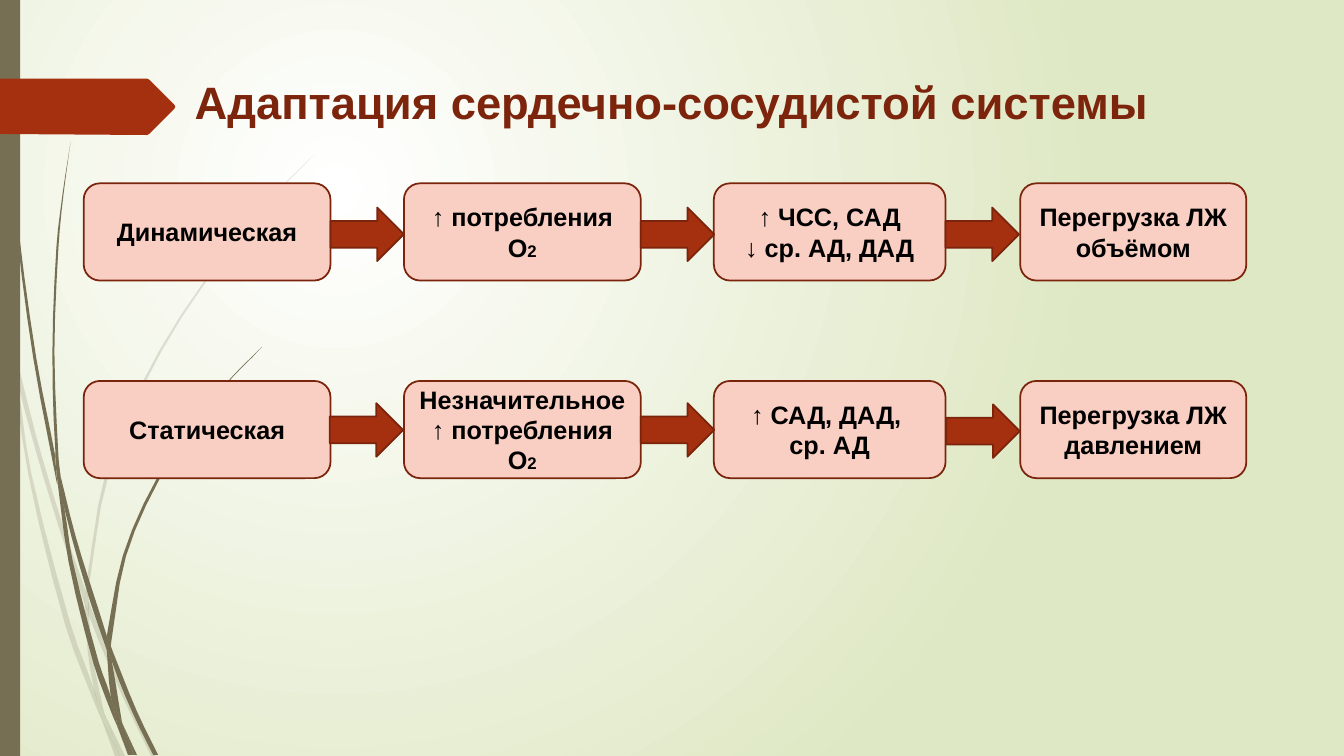
from dataclasses import dataclass

from lxml.etree import SubElement
from pptx import Presentation
from pptx.dml.color import RGBColor
from pptx.enum.shapes import MSO_SHAPE
from pptx.enum.text import MSO_ANCHOR, PP_ALIGN
from pptx.oxml.ns import qn
from pptx.shapes.autoshape import Shape
from pptx.slide import Slide
from pptx.text.text import _Paragraph as Para
from pptx.util import Cm, Pt

WHITE = RGBColor(0xFF, 0xFF, 0xFF)
BLACK = RGBColor(0, 0, 0)
LIME = RGBColor(0xDF, 0xE8, 0xC4)
OLIVE = RGBColor(0x76, 0x6F, 0x54)
RUST = RGBColor(0xA5, 0x30, 0x10)
BROWN = RGBColor(0x7A, 0x24, 0x0C)
TITLE = RGBColor(0x7C, 0x24, 0x0C)
PINK = RGBColor(0xF9, 0xCF, 0xC3)

Edge = list[tuple[float, float]]
Line = tuple[str, ...]


@dataclass
class Stem:
    """A piece of grass between two edges, in hundredths of an inch."""
    left: Edge
    right: Edge


@dataclass
class Col:
    """A column of boxes, in centimetres."""
    left: float
    width: float


@dataclass
class Row:
    """A chain of boxes and arrows; the second run of a line is small."""
    top: float
    cells: list[list[Line]]
    arrows: Edge


PALE = [
    Stem([(0, 299), (10, 344), (11, 350)], [(0, 282), (9, 322), (11, 350)]),
    Stem([(14, 345), (17, 376), (36, 449), (58, 522), (84, 599)],
         [(14, 345), (36, 433), (62, 520), (85, 586)]),
    Stem([(88, 596), (88, 610), (123, 694), (150, 750)],
         [(88, 596), (92, 607), (127, 692), (155, 750)]),
    Stem([(105, 711), (119, 750)], [(105, 711), (124, 750)]),
    Stem([(11, 350), (28, 470), (65, 621), (92, 693), (101, 714)],
         [(11, 350), (17, 376), (31, 469), (70, 619), (93, 683), (99, 707),
          (101, 714)]),
    Stem([(84, 599), (87, 646), (93, 683), (96, 692), (105, 711)],
         [(84, 599), (88, 608), (91, 646), (103, 706), (105, 711)]),
    Stem([(312, 153), (268, 197), (228, 244), (158, 348), (107, 461),
          (85, 584), (85, 586)],
         [(312, 154), (268, 198), (229, 245), (160, 349), (110, 462),
          (88, 584), (88, 596)]),
    Stem([(101, 714), (114, 750)], [(101, 714), (119, 750)]),
    Stem([(85, 586), (84, 599), (88, 608)], [(85, 586), (88, 596), (88, 610)]),
    Stem([(93, 683), (99, 707), (101, 714), (119, 750)],
         [(93, 683), (96, 692), (105, 711), (119, 750)]),
]
DARK = [
    Stem([(3, 0), (4, 48), (7, 110), (17, 233), (33, 355), (56, 477),
          (57, 481)],
         [(4, 0), (5, 48), (8, 109), (19, 232), (36, 355), (55, 453),
          (55, 457), (57, 481)]),
    Stem([(60, 472), (64, 505), (88, 592), (106, 645)],
         [(60, 472), (75, 532), (93, 590), (106, 631), (106, 633)]),
    Stem([(110, 641), (111, 656), (132, 708), (152, 749)],
         [(110, 641), (113, 649), (136, 706), (157, 749)]),
    Stem([(57, 477), (68, 557), (93, 659), (111, 708), (117, 722)],
         [(57, 477), (64, 505), (72, 556), (98, 657), (110, 691), (116, 717),
          (117, 722)]),
    Stem([(70, 141), (62, 193), (56, 245), (52, 349), (55, 449), (60, 472)],
         [(70, 141), (63, 193), (58, 245), (54, 349), (58, 453), (60, 472)]),
    Stem([(122, 719), (133, 749)], [(122, 719), (136, 749)]),
    Stem([(55, 449), (55, 453), (57, 477), (64, 505)],
         [(55, 449), (60, 472), (64, 505)]),
    Stem([(260, 344), (231, 373), (204, 405), (156, 474), (122, 551),
          (106, 631)],
         [(261, 344), (231, 374), (205, 406), (158, 476), (125, 552),
          (111, 633), (110, 641)]),
    Stem([(117, 722), (127, 749)], [(117, 722), (131, 749)]),
    Stem([(106, 645), (110, 691), (116, 706), (122, 719)],
         [(106, 645), (109, 651), (111, 656), (121, 716), (122, 719)]),
    Stem([(106, 631), (106, 645), (109, 651), (111, 656)],
         [(106, 631), (110, 641), (111, 656)]),
    Stem([(110, 691), (116, 717), (117, 722), (130, 749)],
         [(110, 691), (116, 706), (122, 719), (133, 749)]),
]
TAG = [(1730, 1080), (1480, 1330), (1460, 1340), (0, 1330), (0, 780),
       (1460, 780), (1480, 790), (1730, 1040), (1740, 1060)]
COLS = [Col(2.11, 6.22), Col(10.18, 5.97), Col(17.99, 5.84), Col(25.71, 5.7)]
ROWS = [
    Row(4.62, [[("Динамическая",)],
               [("↑ потребления О", "2")],
               [("↑ ЧСС, САД",), ("↓ ср. АД, ДАД",)],
               [("Перегрузка ЛЖ объёмом",)]],
        [(8.33, 5.23), (16.15, 5.23), (23.83, 5.23)]),
    Row(9.6, [[("Статическая",)],
              [("Незначительное ",), ("↑ потребления О", "2")],
              [("↑ САД, ДАД, ",), ("ср. АД",)],
              [("Перегрузка ЛЖ давлением",)]],
        [(8.31, 10.16), (16.15, 10.16), (23.85, 10.19)]),
]


def curve(edge: Edge) -> Edge:
    """Return a smooth run of points, in thousandths of an inch."""
    ends = [edge[0], *edge, edge[-1]]
    dots = [(10 * edge[0][0], 10 * edge[0][1])]
    for a, b, c, d in zip(ends, ends[1:], ends[2:], ends[3:]):
        high = c[1] - b[1]
        m = (c[0] - a[0]) / (c[1] - a[1]) * high
        n = (d[0] - b[0]) / (d[1] - b[1]) * high
        for t in (1 / 3, 2 / 3, 1):
            x = (b[0] * (1 + 2 * t) * (1 - t) ** 2 + m * t * (1 - t) ** 2
                 + c[0] * t * t * (3 - 2 * t) + n * t * t * (t - 1))
            dots.append((10 * x, 10 * (b[1] + high * t)))
    return dots


def paint(shape: Shape, fill: RGBColor, line: RGBColor | None = None) -> None:
    """Set the fill and outline of a shape and drop its shadow."""
    shape.shadow.inherit = False
    shape.fill.solid()
    shape.fill.fore_color.rgb = fill
    if line is None:
        shape.line.fill.background()
    else:
        shape.line.color.rgb = line
        shape.line.width = Pt(1.25)


def add_run(para: Para, text: str, size: float, color: RGBColor) -> None:
    """Add one bold run."""
    run = para.add_run()
    run.text = text
    font = run.font
    font.name, font.size, font.bold = "Arial", Pt(size), True
    font.color.rgb = color


def add_form(slide: Slide, kind: MSO_SHAPE, left: float, top: float,
             width: float, high: float) -> Shape:
    """Add a preset shape placed in centimetres."""
    return slide.shapes.add_shape(kind, Cm(left), Cm(top), Cm(width), Cm(high))


def add_back(slide: Slide) -> None:
    """Fill the background with a round gradient."""
    fill = slide.background.fill
    fill.gradient()
    for stop, color, place in zip(fill.gradient_stops, (WHITE, LIME), (0, 1)):
        stop.color.rgb = color
        stop.position = place
    grad = slide.element.find(".//" + qn("a:gradFill"))
    grad.remove(grad.find(qn("a:lin")))
    ring = SubElement(grad, qn("a:path"), {"path": "circle"})
    SubElement(ring, qn("a:fillToRect"),
               {"l": "50000", "t": "50000", "r": "100000", "b": "100000"})


def add_free(slide: Slide, dots: Edge, fill: RGBColor) -> Shape:
    """Draw a closed outline given in thousandths of an inch."""
    pen = slide.shapes.build_freeform(*dots[0], scale=Cm(2.54) / 1000)
    pen.add_line_segments(dots[1:], close=True)
    shape = pen.convert_to_shape()
    paint(shape, fill)
    return shape


def add_stem(slide: Slide, stem: Stem) -> Shape:
    """Draw one piece of grass."""
    return add_free(slide, curve(stem.left) + curve(stem.right)[:0:-1], OLIVE)


def add_title(slide: Slide, text: str) -> None:
    """Place and format the title."""
    title = slide.shapes.title
    title.left, title.top = Cm(4.65), Cm(1.74)
    title.width, title.height = Cm(27.3), Cm(1.63)
    title.text_frame.vertical_anchor = MSO_ANCHOR.MIDDLE
    para = title.text_frame.paragraphs[0]
    para.alignment = PP_ALIGN.LEFT
    add_run(para, text, 32.4, TITLE)


def add_box(slide: Slide, col: Col, top: float, lines: list[Line]) -> None:
    """Draw one rounded box with its text."""
    shape = add_form(slide, MSO_SHAPE.ROUNDED_RECTANGLE,
                     col.left, top, col.width, 2.45)
    paint(shape, PINK, BROWN)
    frame = shape.text_frame
    frame.word_wrap = True
    frame.vertical_anchor = MSO_ANCHOR.MIDDLE
    for i, line in enumerate(lines):
        para = frame.add_paragraph() if i else frame.paragraphs[0]
        para.alignment = PP_ALIGN.CENTER
        for text, size in zip(line, (18, 12)):
            add_run(para, text, size, BLACK)


def main() -> None:
    """Build the slide and save it."""
    deck = Presentation()
    deck.slide_width, deck.slide_height = Cm(33.87), Cm(19.05)
    slide = deck.slides.add_slide(deck.slide_layouts[5])
    add_back(slide)
    for stem in PALE:
        tint = add_stem(slide, stem).element.find(".//" + qn("a:srgbClr"))
        SubElement(tint, qn("a:alpha"), {"val": "20000"})
    for stem in DARK:
        add_stem(slide, stem)
    paint(add_form(slide, MSO_SHAPE.RECTANGLE, 0, 0, 0.51, 19.05), OLIVE)
    add_free(slide, TAG, RUST)
    add_title(slide, "Адаптация сердечно-сосудистой системы")
    for row in ROWS:
        for col, lines in zip(COLS, row.cells):
            add_box(slide, col, row.top, lines)
        for left, top in row.arrows:
            paint(add_form(slide, MSO_SHAPE.RIGHT_ARROW, left, top, 1.85, 1.35),
                  RUST, BROWN)
    deck.save("out.pptx")


if __name__ == "__main__":
    main()
